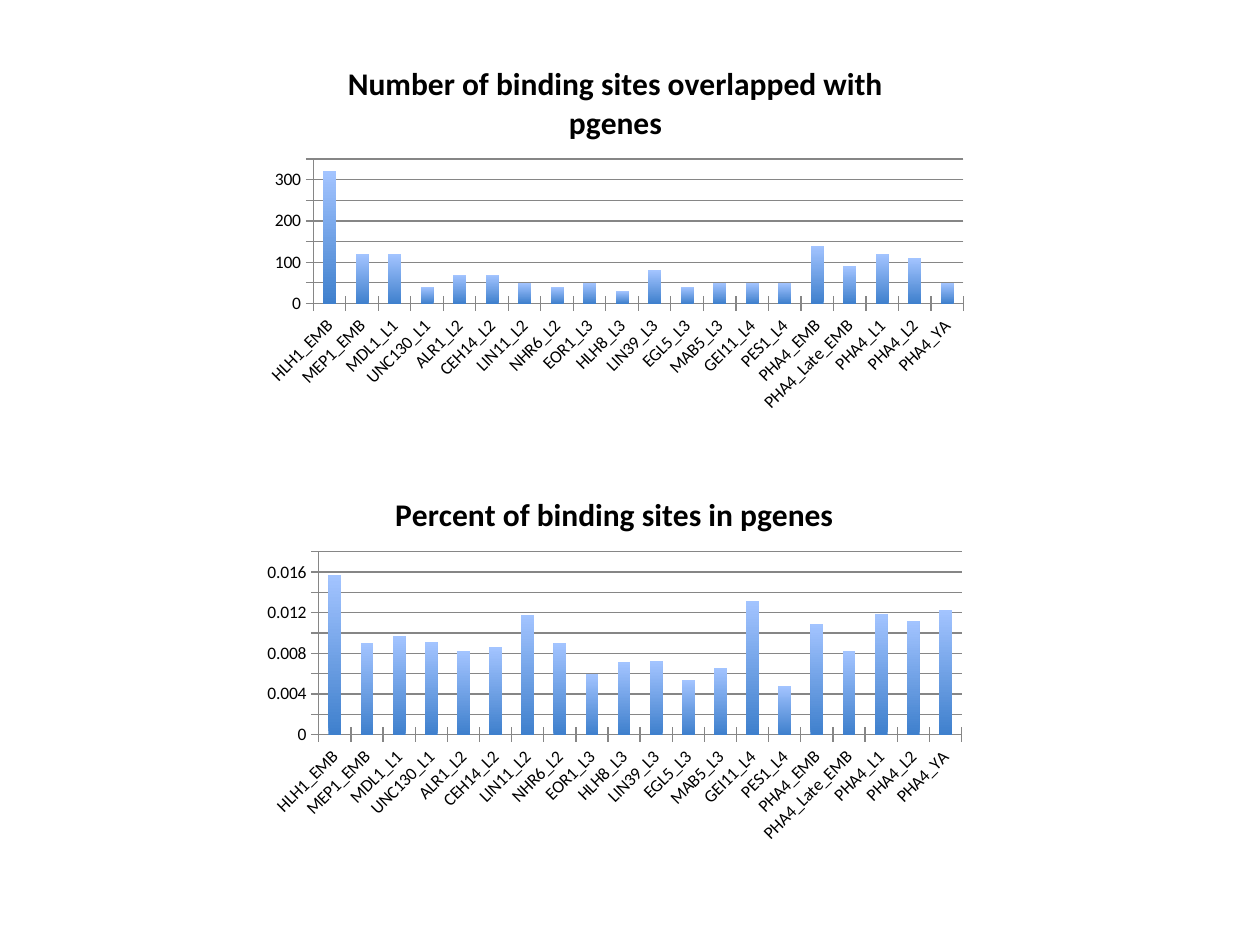
from dataclasses import dataclass

from pptx import Presentation, util as u
from pptx.chart.data import CategoryChartData
from pptx.dml.color import RGBColor
from pptx.enum import chart as c
from pptx.slide import Slide

PX = u.Inches(1) / 126


@dataclass(frozen=True)
class Theme:
    font: str = "Calibri"
    label_size: int = 10
    title_size: int = 18
    ink: RGBColor = RGBColor(0x00, 0x00, 0x00)
    grid: RGBColor = RGBColor(0x86, 0x86, 0x86)
    bar_bottom: RGBColor = RGBColor(0x3F, 0x80, 0xCD)
    bar_top: RGBColor = RGBColor(0xA3, 0xC4, 0xFF)


@dataclass(frozen=True)
class BindingChart:
    title: str
    series_name: str
    counts: tuple[float, ...]
    top: int
    width: int
    maximum: float
    step: float


THEME = Theme()
LEFT, HEIGHT = 253, 378
FACTORS = (
    "HLH1_EMB", "MEP1_EMB", "MDL1_L1", "UNC130_L1", "ALR1_L2",
    "CEH14_L2", "LIN11_L2", "NHR6_L2", "EOR1_L3", "HLH8_L3",
    "LIN39_L3", "EGL5_L3", "MAB5_L3", "GEI11_L4", "PES1_L4",
    "PHA4_EMB", "PHA4_Late_EMB", "PHA4_L1", "PHA4_L2", "PHA4_YA",
)
OVERLAP_TITLE = "Number of binding sites overlapped with pgenes"
CHARTS = (
    BindingChart(
        OVERLAP_TITLE, OVERLAP_TITLE,
        (320, 120, 120, 40, 70, 70, 50, 40, 50, 30,
         80, 40, 50, 50, 50, 140, 90, 120, 110, 50),
        top=42, width=725, maximum=350, step=50,
    ),
    BindingChart(
        "Percent of binding sites in pgenes", "Series 1",
        (0.0157, 0.009, 0.0097, 0.0091, 0.0082, 0.0086, 0.0118, 0.009, 0.006, 0.0071,
         0.0072, 0.0054, 0.0066, 0.0132, 0.0048, 0.0109, 0.0082, 0.0119, 0.0112, 0.0123),
        top=473, width=723, maximum=0.018, step=0.002,
    ),
)


def emu(px: int) -> u.Emu:
    return u.Emu(round(px * PX))


def draw_chart(slide: Slide, binding: BindingChart) -> None:
    sites = CategoryChartData(number_format="General")
    sites.categories = FACTORS
    sites.add_series(binding.series_name, binding.counts)
    chart = slide.shapes.add_chart(
        c.XL_CHART_TYPE.COLUMN_CLUSTERED,
        emu(LEFT), emu(binding.top), emu(binding.width), emu(HEIGHT), sites,
    ).chart
    chart.has_legend = False
    chart.font.name = THEME.font
    chart.font.size = u.Pt(THEME.label_size)
    chart.font.color.rgb = THEME.ink

    chart.has_title = True
    heading = chart.chart_title.text_frame.paragraphs[0]
    heading.text = binding.title
    heading.font.name = THEME.font
    heading.font.size = u.Pt(THEME.title_size)
    heading.font.bold = True
    heading.font.color.rgb = THEME.ink

    plot = chart.plots[0]
    plot.gap_width = 150
    plot.vary_by_categories = False
    bars = plot.series[0].format.fill
    bars.gradient()
    bars.gradient_angle = 90
    for stop, color in zip(bars.gradient_stops, (THEME.bar_bottom, THEME.bar_top)):
        stop.color.rgb = color

    factor_axis, site_axis = chart.category_axis, chart.value_axis
    site_axis.minimum_scale = 0
    site_axis.maximum_scale = binding.maximum
    site_axis.major_unit = binding.step
    site_axis.has_major_gridlines = True
    for axis in (factor_axis, site_axis):
        axis.major_tick_mark = c.XL_TICK_MARK.CROSS
        axis.minor_tick_mark = c.XL_TICK_MARK.NONE
        axis.tick_labels.font.size = u.Pt(THEME.label_size)
    for line in (factor_axis.format.line, site_axis.format.line,
                 site_axis.major_gridlines.format.line):
        line.color.rgb = THEME.grid
        line.width = u.Pt(0.75)
    factor_axis._element.txPr.bodyPr.set("rot", "-2700000")


def main() -> None:
    deck = Presentation()
    deck.slide_width, deck.slide_height = emu(1260), emu(945)
    slide = deck.slides.add_slide(deck.slide_layouts[6])
    for binding in CHARTS:
        draw_chart(slide, binding)
    deck.save("out.pptx")


if __name__ == "__main__":
    main()
